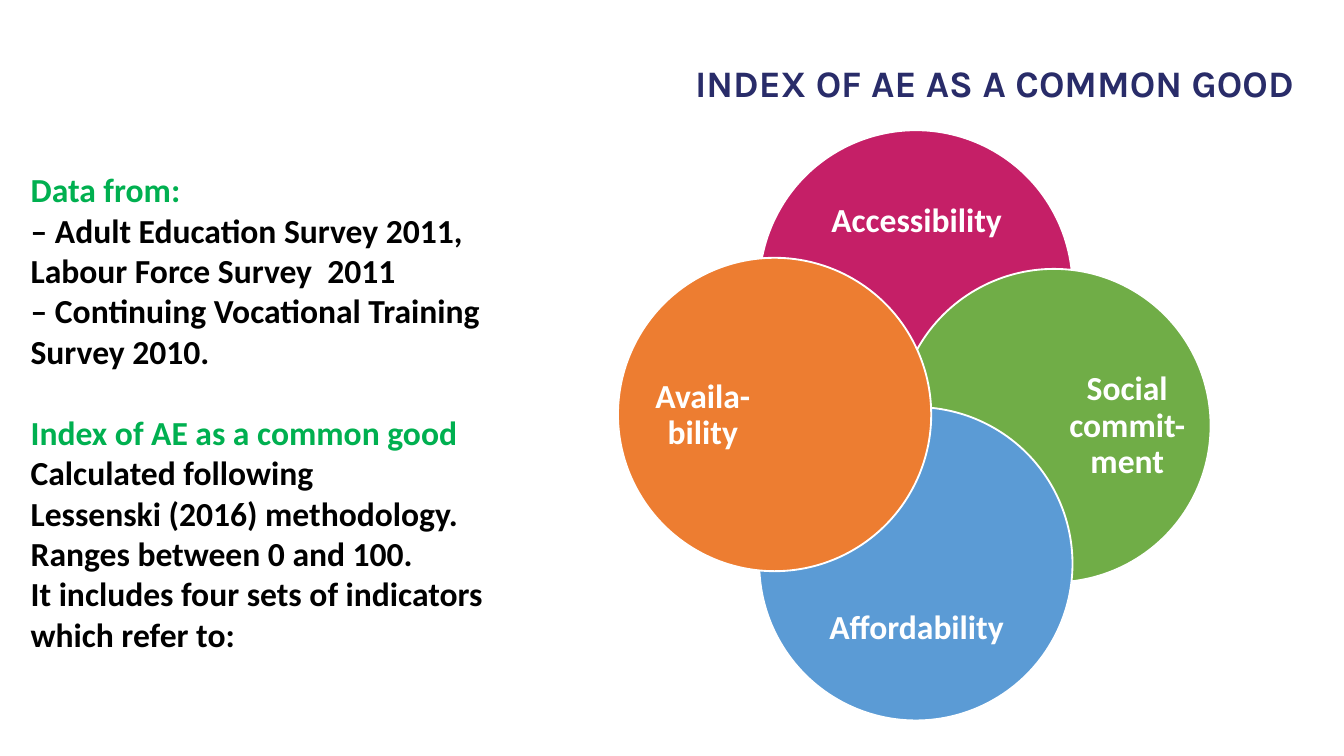
from pptx import Presentation
from pptx.dml.color import RGBColor
from pptx.enum.shapes import MSO_SHAPE
from pptx.enum.text import MSO_ANCHOR, MSO_AUTO_SIZE, PP_ALIGN
from pptx.util import Cm, Pt

OVAL = MSO_SHAPE.OVAL
TOP, MIDDLE = MSO_ANCHOR.TOP, MSO_ANCHOR.MIDDLE
LEFT, CENTER, RIGHT = PP_ALIGN.LEFT, PP_ALIGN.CENTER, PP_ALIGN.RIGHT
GROW = MSO_AUTO_SIZE.SHAPE_TO_FIT_TEXT

WHITE = RGBColor(0xFF, 0xFF, 0xFF)
BLACK = RGBColor(0, 0, 0)
NAVY = RGBColor(0x29, 0x2C, 0x69)
LEAF = RGBColor(0x00, 0xB0, 0x50)
MAGENTA = RGBColor(0xC5, 0x1F, 0x67)
GREEN = RGBColor(0x70, 0xAD, 0x47)
BLUE = RGBColor(0x5B, 0x9B, 0xD5)
ORANGE = RGBColor(0xED, 0x7D, 0x31)

TITLE_FONT = {"name": "Karla", "size": Pt(20), "bold": True}
BODY_FONT = {"name": "Calibri", "size": Pt(18), "bold": True}

SOURCES = [
    "– Adult Education Survey 2011, Labour Force Survey  2011",
    "– Continuing Vocational Training Survey 2010.",
]
METHOD = [
    "Calculated following",
    "Lessenski (2016) methodology.",
    "Ranges between 0 and 100.",
    "It includes four sets of indicators",
    "which refer to:",
]
SECTIONS = [("Data from:", SOURCES), ("Index of AE as a common good", METHOD)]

DIAMETER = 5.92
WIDE, TALL = (4.57, 1.88), (2.29, 4.57)
CIRCLES = [
    ("Accessibility", MAGENTA, (2.67, 0), (0.69, 0.79), WIDE),
    ("Social commit-ment", GREEN, (5.28, 2.62), (3.2, 0.69), TALL),
    ("Affordability", BLUE, (2.67, 5.23), (0.69, 3.25), WIDE),
    ("Availa-bility", ORANGE, (0, 2.41), (0.46, 0.69), TALL),
]


def set_all(target, values):
    """Set every attribute in values on target."""
    for name, value in values.items():
        setattr(target, name, value)


def add_text(shapes, box, lines, font, para, frame):
    """Add a text box with one paragraph for each (text, colour) line."""
    tf = shapes.add_textbox(*map(Cm, box)).text_frame
    set_all(tf, {"word_wrap": True, **frame})
    for i, (text, color) in enumerate(lines):
        p = tf.paragraphs[0] if i == 0 else tf.add_paragraph()
        set_all(p, para)
        r = p.add_run()
        r.text = text
        set_all(r.font, font)
        r.font.color.rgb = color
    return tf


def add_title(s, box):
    """Place the right-aligned slide title."""
    add_text(s.shapes, box, [("INDEX OF AE AS A COMMON GOOD", NAVY)], TITLE_FONT,
             {"alignment": RIGHT, "line_spacing": 0.9}, {"vertical_anchor": MIDDLE})


def add_notes_column(s, box):
    """Place the sections of text, each under a green heading."""
    lines = []
    for heading, body in SECTIONS:
        lines += [(heading, LEAF), *((text, BLACK) for text in body)]
    tf = add_text(s.shapes, box, lines, BODY_FONT, {"alignment": LEFT},
                  {"vertical_anchor": TOP, "auto_size": GROW})
    tf.paragraphs[1 + len(SOURCES)].space_before = Pt(22)


def add_circles(s, box):
    """Place the overlapping labelled circles in one group."""
    left, top = box
    group = s.shapes.add_group_shape()
    frame = dict.fromkeys(
        ("margin_left", "margin_top", "margin_right", "margin_bottom"), 0)
    frame["vertical_anchor"] = MIDDLE
    for text, color, (dx, dy), (label_dx, label_dy), size in CIRCLES:
        x, y = left + dx, top + dy
        sp = group.shapes.add_shape(OVAL, *map(Cm, (x, y, DIAMETER, DIAMETER)))
        sp.shadow.inherit = False
        sp.fill.solid()
        sp.fill.fore_color.rgb = color
        sp.line.color.rgb = WHITE
        sp.line.width = Pt(1)
        add_text(group.shapes, (x + label_dx, y + label_dy, *size), [(text, WHITE)],
                 BODY_FONT, {"alignment": CENTER, "line_spacing": 0.9}, frame)


def main():
    """Build the slide and save it."""
    prs = Presentation()
    prs.slide_width, prs.slide_height = Cm(25.4), Cm(14.28)
    s = prs.slides.add_slide(prs.slide_layouts[6])
    add_title(s, (8.71, 0.86, 16, 1.5))
    add_circles(s, (11.68, 2.46))
    add_notes_column(s, (0.33, 3.07, 9.58, 9.65))
    prs.save("out.pptx")


if __name__ == "__main__":
    main()
